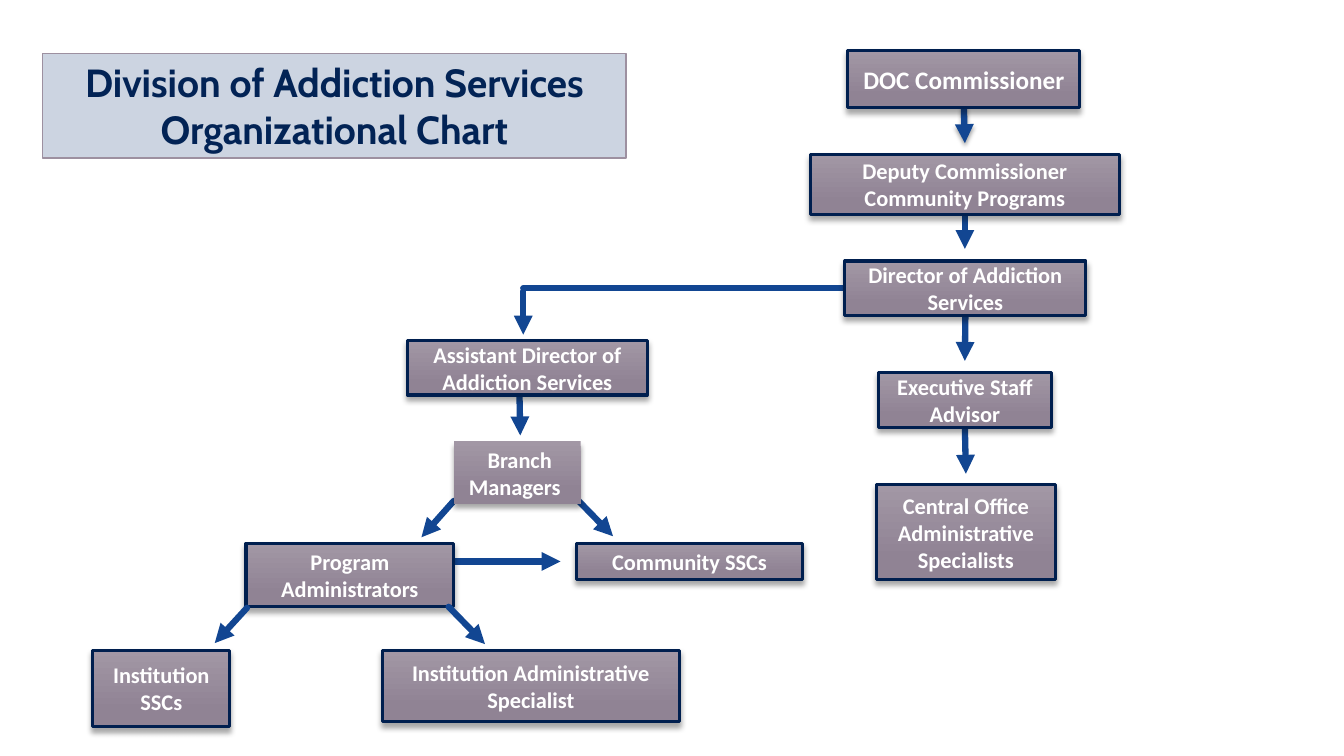
from dataclasses import dataclass

from lxml.etree import SubElement
from pptx import Presentation
from pptx.dml.color import RGBColor
from pptx.enum.shapes import MSO_CONNECTOR, MSO_SHAPE
from pptx.enum.text import MSO_ANCHOR, MSO_AUTO_SIZE, PP_ALIGN
from pptx.oxml.ns import qn
from pptx.shapes.autoshape import Shape
from pptx.shapes.connector import Connector
from pptx.shapes.shapetree import GroupShapes
from pptx.util import Inches, Pt

BOTTOM, LEFT = 2, 1  # connection sites of a rectangle


@dataclass(frozen=True)
class Theme:
    box_top: str = "A297A5"
    box_bottom: str = "908394"
    box_line: str = "001F4F"
    arrow: str = "124692"
    title_fill: str = "CCD4E1"
    title_line: str = "9D90A0"
    title_text: str = "022355"
    box_text: str = "FFFFFF"
    shadow: str = "000000"
    title_font: str = "Cabin"
    box_font: str = "Calibri"
    title_size: int = 28
    head_size: int = 18
    box_size: int = 16


THEME = Theme()


@dataclass(frozen=True)
class Role:
    text: str
    left: float
    top: float
    width: float
    height: float
    size: int = THEME.box_size
    outlined: bool = True


@dataclass(frozen=True)
class Link:
    start: tuple[float, float]
    end: tuple[float, float]
    begin_role: str = ""  # role whose bottom side the link leaves
    end_role: str = ""  # role whose left side the link meets
    arrow: bool = True
    shadow: bool = False


ROLES = {
    "commissioner": Role("DOC Commissioner", 8.41, 0.5, 2.3, 0.57, THEME.head_size),
    "deputy": Role("Deputy Commissioner\nCommunity Programs", 8.04, 1.53, 3.06, 0.6),
    "director": Role("Director of Addiction Services", 8.38, 2.59, 2.39, 0.54),
    "assistant": Role("Assistant Director of Addiction Services", 4.04, 3.38, 2.38, 0.54),
    "branch": Role(" Branch Managers ", 4.5, 4.38, 1.26, 0.62, outlined=False),
    "advisor": Role("Executive Staff Advisor", 8.71, 3.7, 1.72, 0.54),
    "central": Role("Central Office Administrative Specialists", 8.69, 4.81, 1.78, 0.94),
    "program": Role("Program Administrators", 2.44, 5.39, 2.06, 0.63),
    "community": Role("Community SSCs", 5.72, 5.39, 2.24, 0.36),
    "institution": Role("Institution SSCs", 0.92, 6.45, 1.36, 0.76),
    "specialist": Role("Institution Administrative Specialist", 3.79, 6.45, 2.95, 0.71),
}

LINKS_BEHIND = [
    Link((5.72, 4.95), (6.08, 5.32)),
    Link((4.5, 4.97), (4.18, 5.33)),
    Link((4.5, 5.57), (5.56, 5.57)),
    Link((9.57, 4.24), (9.58, 4.7), "advisor"),
    Link((9.57, 3.13), (9.57, 3.58), "director"),
    Link((9.57, 2.13), (9.57, 2.47), "deputy"),
    Link((9.56, 1.07), (9.57, 1.42), "commissioner", shadow=True),
    Link((5.15, 3.8), (5.16, 4.32)),
    Link((5.19, 2.86), (8.38, 2.86), end_role="director", arrow=False),
]
LINKS_IN_FRONT = [
    Link((5.19, 2.89), (5.19, 3.32)),
    Link((2.45, 6.03), (2.13, 6.38)),
    Link((4.45, 6.02), (4.81, 6.39)),
]


def add_shadow(effects, blur: float, distance: float) -> None:
    outer = SubElement(effects, qn("a:outerShdw"), blurRad=str(Pt(blur)),
                       dist=str(Pt(distance)), dir="5400000", rotWithShape="0")
    color = SubElement(outer, qn("a:srgbClr"), val=THEME.shadow)
    SubElement(color, qn("a:alpha"), val="35000")


def write_text(shape: Shape, text: str, font: str, size: int, color: str) -> None:
    frame = shape.text_frame
    frame.word_wrap = True
    frame.text = text
    style = {"name": font, "size": Pt(size), "bold": True}
    for paragraph in frame.paragraphs:
        paragraph.alignment = PP_ALIGN.CENTER
        for run in paragraph.runs:
            for attribute, value in style.items():
                setattr(run.font, attribute, value)
            run.font.color.rgb = RGBColor.from_string(color)


def set_line(shape: Shape | Connector, color: str, width: float) -> None:
    shape.line.color.rgb = RGBColor.from_string(color)
    shape.line.width = Pt(width)


def add_role(shapes: GroupShapes, role: Role) -> Shape:
    box = shapes.add_shape(MSO_SHAPE.RECTANGLE, Inches(role.left), Inches(role.top),
                           Inches(role.width), Inches(role.height))
    box.fill.gradient()
    box.fill.gradient_angle = 270
    stops = ((0, THEME.box_top), (0.78, THEME.box_bottom))
    for stop, (position, color) in zip(box.fill.gradient_stops, stops):
        stop.position = position
        stop.color.rgb = RGBColor.from_string(color)
    if role.outlined:
        set_line(box, THEME.box_line, 2.25)
    else:
        box.line.fill.background()
    box.shadow.inherit = False
    add_shadow(box._element.spPr.find(qn("a:effectLst")), 4, 3)
    write_text(box, role.text, THEME.box_font, role.size, THEME.box_text)
    return box


def add_link(shapes: GroupShapes, link: Link) -> Connector:
    ends = [Inches(value) for value in (*link.start, *link.end)]
    connector = shapes.add_connector(MSO_CONNECTOR.STRAIGHT, *ends)
    set_line(connector, THEME.arrow, 4.5)
    properties = connector._element.spPr
    outline = properties.find(qn("a:ln"))
    outline.set("cap", "rnd")
    if link.arrow:
        SubElement(outline, qn("a:tailEnd"), type="triangle")
    effects = SubElement(properties, qn("a:effectLst"))
    if link.shadow:
        add_shadow(effects, 3, 2)
    return connector


def main() -> None:
    deck = Presentation()
    deck.slide_width, deck.slide_height = Inches(13.33), Inches(7.5)
    slide = deck.slides.add_slide(deck.slide_layouts[6])

    # Organizational chart: links behind, roles, links in front
    chart = slide.shapes.add_group_shape().shapes
    links = [(link, add_link(chart, link)) for link in LINKS_BEHIND]
    boxes = {key: add_role(chart, role) for key, role in ROLES.items()}
    for link in LINKS_IN_FRONT:
        add_link(chart, link)

    # Join links to the sides of their roles
    for link, connector in links:
        if link.begin_role:
            connector.begin_connect(boxes[link.begin_role], BOTTOM)
        if link.end_role:
            connector.end_connect(boxes[link.end_role], LEFT)

    # Title
    title = slide.shapes.add_shape(MSO_SHAPE.RECTANGLE, Inches(0.42), Inches(0.53),
                                   Inches(5.79), Inches(1.04))
    title.fill.solid()
    title.fill.fore_color.rgb = RGBColor.from_string(THEME.title_fill)
    set_line(title, THEME.title_line, 1)
    title.shadow.inherit = False
    title.text_frame.vertical_anchor = MSO_ANCHOR.TOP
    title.text_frame.auto_size = MSO_AUTO_SIZE.SHAPE_TO_FIT_TEXT
    write_text(title, "Division of Addiction Services\nOrganizational Chart",
               THEME.title_font, THEME.title_size, THEME.title_text)

    deck.save("out.pptx")


if __name__ == "__main__":
    main()
